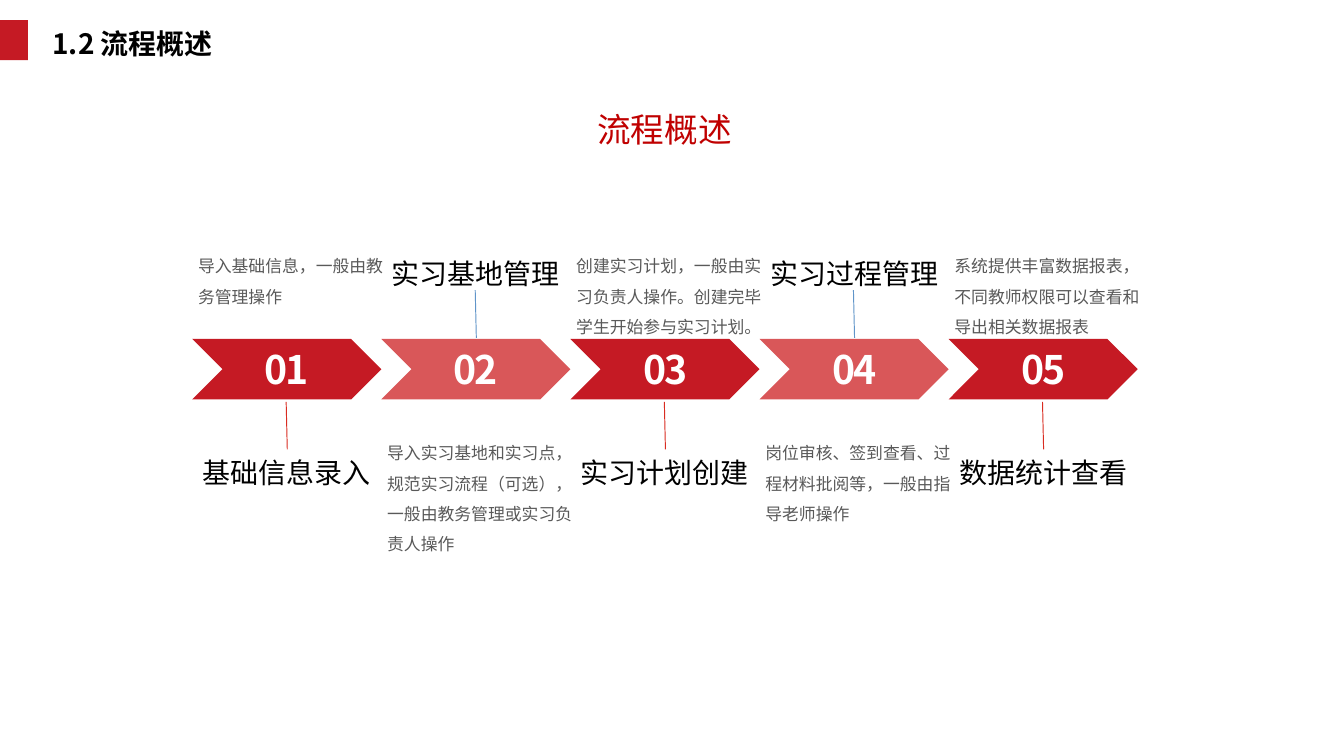
"""Builds the process overview slide with five numbered chevrons."""
import pptx
import pptx.dml.color
import pptx.enum.shapes
import pptx.enum.text
import pptx.oxml.ns
import pptx.util
from lxml import etree

Pt = pptx.util.Pt
RGB = pptx.dml.color.RGBColor
SHAPE = pptx.enum.shapes.MSO_SHAPE
ALIGN = pptx.enum.text.PP_ALIGN
ANCHOR = pptx.enum.text.MSO_ANCHOR
qn = pptx.oxml.ns.qn

FONT = "Noto Sans CJK SC"
RED = RGB(0xC5, 0x1A, 0x24)
ROSE = RGB(0xD9, 0x57, 0x59)
CRIMSON = RGB(0xC0, 0x00, 0x00)
SCARLET = RGB(0xD9, 0x2C, 0x21)
BLUE = RGB(0x60, 0x95, 0xC9)
GREY = RGB(0x59, 0x59, 0x59)
BLACK = RGB(0x00, 0x00, 0x00)
WHITE = RGB(0xFF, 0xFF, 0xFF)

STEPS = [
    ("基础信息录入", "导入基础信息，一般由教务管理操作"),
    ("实习基地管理", "导入实习基地和实习点，规范实习流程（可选），一般由教务管理或实习负责人操作"),
    ("实习计划创建", "创建实习计划，一般由实习负责人操作。创建完毕学生开始参与实习计划。"),
    ("实习过程管理", "岗位审核、签到查看、过程材料批阅等，一般由指导老师操作"),
    ("数据统计查看", "系统提供丰富数据报表，不同教师权限可以查看和导出相关数据报表"),
]
LEFT, STEP = 103, 101.3

deck = pptx.Presentation()
deck.slide_width, deck.slide_height = Pt(720), Pt(405)
slide = deck.slides.add_slide(deck.slide_layouts[5])
shapes = slide.shapes


def write(box, text, size, color, align=ALIGN.CENTER, bold=False, pad=3.6):
    frame = box.text_frame
    frame.word_wrap = True
    frame.auto_size = pptx.enum.text.MSO_AUTO_SIZE.NONE
    frame.vertical_anchor = ANCHOR.MIDDLE
    frame.margin_left = frame.margin_right = Pt(pad)
    frame.margin_top = frame.margin_bottom = Pt(pad * 0.8)
    para = frame.paragraphs[0]
    para.alignment = align
    run = para.add_run()
    run.text = text
    font = run.font
    font.name, font.size, font.bold = FONT, Pt(size), bold
    font.color.rgb = color
    props = run._r.get_or_add_rPr()
    etree.SubElement(props, qn("a:ea")).set("typeface", FONT)
    return para, props


def block(kind, left, top, width, height, color):
    shape = shapes.add_shape(kind, Pt(left), Pt(top), Pt(width), Pt(height))
    shape.shadow.inherit = False
    shape.fill.solid()
    shape.fill.fore_color.rgb = color
    shape.line.fill.background()


title = shapes.title
title.left, title.top, title.width, title.height = Pt(24.5), Pt(10.8), Pt(211), Pt(25.2)
write(title, "1.2 流程概述", 15, BLACK, ALIGN.LEFT, True)
block(SHAPE.RECTANGLE, 0, 10.8, 15, 21.4, RED)

head = shapes.add_textbox(Pt(219), Pt(55.4), Pt(274), Pt(27.4))
write(head, "流程概述", 18, CRIMSON)

for i, (name, detail) in enumerate(STEPS):
    x = LEFT + i * STEP
    if i % 2:
        fill, stroke, name_y, line_y, note_y = ROSE, BLUE, 134.8, 155.5, 229
    else:
        fill, stroke, name_y, line_y, note_y = RED, SCARLET, 241.2, 215.3, 128.9

    block(SHAPE.CHEVRON, x, 181.6, STEP, 32.4, fill)

    label = shapes.add_textbox(Pt(x - 3), Pt(name_y), Pt(107.3), Pt(23.8))
    write(label, name, 15, BLACK)

    note = shapes.add_textbox(Pt(x - 0.5), Pt(note_y), Pt(112), Pt(54.5))
    para, props = write(note, detail, 9, GREY, ALIGN.LEFT)
    para.line_spacing = 1.5
    note.text_frame.vertical_anchor = ANCHOR.TOP

    digit = shapes.add_textbox(Pt(x + 38.1), Pt(185.1), Pt(25.2), Pt(25.2))
    para, props = write(digit, f"{i + 1:02}", 21, WHITE, bold=True, pad=0)
    props.set("spc", "-110")

    line = shapes.add_connector(
        pptx.enum.shapes.MSO_CONNECTOR.STRAIGHT,
        Pt(x + 50.3), Pt(line_y), Pt(x + 50.9), Pt(line_y + 25.5))
    line.line.color.rgb = stroke
    line.line.width = Pt(0.5)
    etree.SubElement(line._element.spPr, qn("a:effectLst"))

deck.save("out.pptx")
